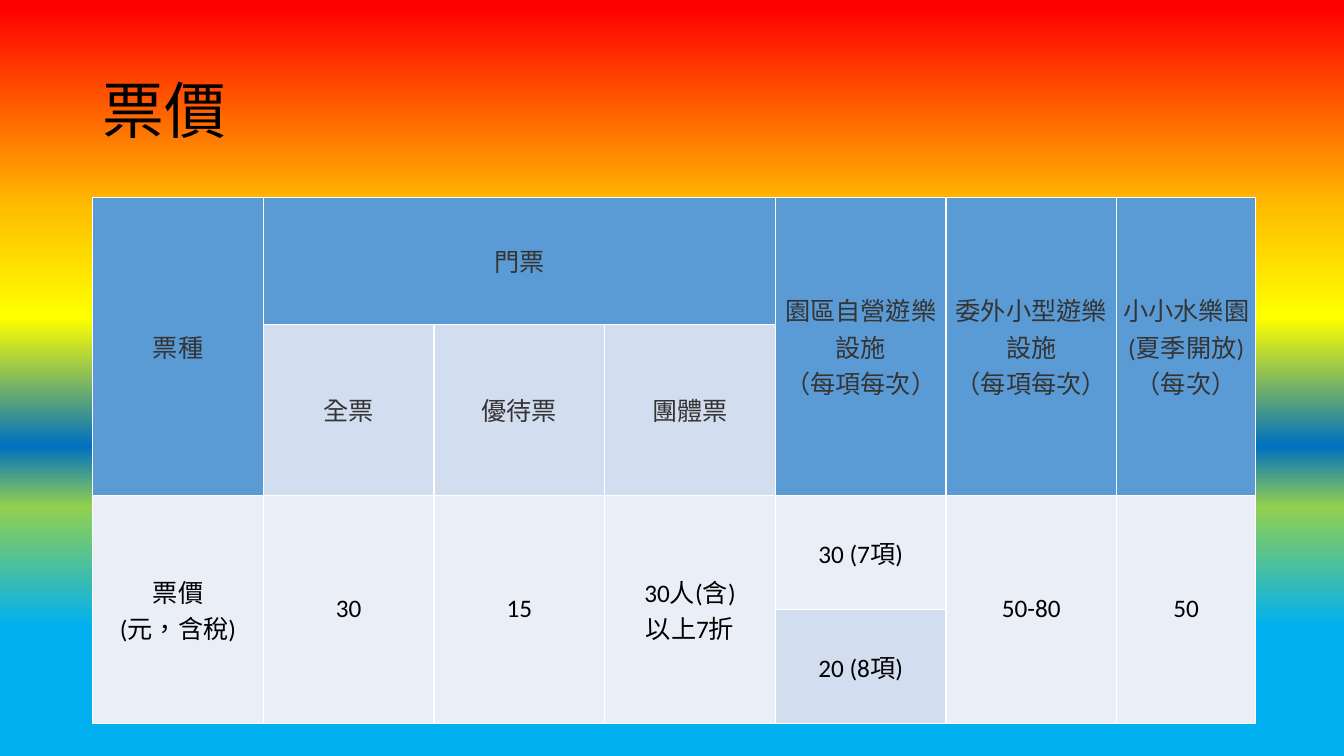
from lxml import etree
from pptx import Presentation
from pptx import util as u
from pptx.dml import color
from pptx.enum import lang, text
from pptx.oxml import ns

COLORS = {
    "ink": "000000", "heading": "343434", "border": "FFFFFF",
    "header": "5B9BD5", "band": "D2DEEF", "pale": "EAEFF7",
}
RAINBOW = [(1, "FF0000"), (28, "FFC000"), (42, "FFFF00"),
           (59, "0070C0"), (67, "92D050"), (83, "00B0F0")]

# Percent of the slide's width and height
COLUMN_SHARES = [12.7] * 6 + [10.35]
ROW_SHARES = [16.8, 22.6, 15.1, 15.1]

# (row, column, rows spanned, columns spanned, wording, fill, text colour)
FARES = [
    (0, 0, 2, 1, "票種", "header", "heading"),
    (0, 1, 1, 3, "門票", "header", "heading"),
    (0, 4, 2, 1, "園區自營遊樂設施\v（每項每次）", "header", "heading"),
    (0, 5, 2, 1, "委外小型遊樂設施\v（每項每次）", "header", "heading"),
    (0, 6, 2, 1, "小小水樂園\v(夏季開放)\v（每次）", "header", "heading"),
    (1, 1, 1, 1, "全票", "band", "heading"),
    (1, 2, 1, 1, "優待票", "band", "heading"),
    (1, 3, 1, 1, "團體票", "band", "heading"),
    (2, 0, 2, 1, "票價\v(元，含稅)", "pale", "ink"),
    (2, 1, 2, 1, "30", "pale", "ink"),
    (2, 2, 2, 1, "15", "pale", "ink"),
    (2, 3, 2, 1, "30人(含)\v以上7折", "pale", "ink"),
    (2, 4, 1, 1, "30 (7項)", "pale", "ink"),
    (3, 4, 1, 1, "20 (8項)", "band", "ink"),
    (2, 5, 2, 1, "50-80", "pale", "ink"),
    (2, 6, 2, 1, "50", "pale", "ink"),
]


def write(frame, words, *, size=18, ink="ink", align=text.PP_ALIGN.LEFT,
          spacing=1.0, font="Calibri"):
    frame.text = words
    frame.word_wrap = True
    for paragraph in frame.paragraphs:
        paragraph.alignment = align
        paragraph.line_spacing = spacing
        for run in paragraph.runs:
            run.font.name = font
            run.font.size = u.Pt(size)
            run.font.color.rgb = color.RGBColor.from_string(COLORS[ink])
            run.font.language_id = lang.MSO_LANGUAGE_ID.TRADITIONAL_CHINESE


class FareSlide:
    def __init__(self, deck):
        self.width, self.height = deck.slide_width, deck.slide_height
        self.slide = deck.slides.add_slide(deck.slide_layouts[6])

    def across(self, percent):
        return u.Emu(round(self.width * percent / 100))

    def down(self, percent):
        return u.Emu(round(self.height * percent / 100))

    def box(self, left, top, width, height):
        return (self.across(left), self.down(top),
                self.across(width), self.down(height))

    def background(self, stops):
        fill = self.slide.background.fill
        fill.gradient()
        fill.gradient_angle = 270
        stop_list = next(self.slide.element.iter(ns.qn("a:gsLst")))
        for stop in list(stop_list):
            stop_list.remove(stop)
        for percent, shade in stops:
            stop = etree.SubElement(stop_list, ns.qn("a:gs"), pos=str(percent * 1000))
            etree.SubElement(stop, ns.qn("a:srgbClr"), val=shade)

    def title(self, words, *place):
        frame = self.slide.shapes.add_textbox(*self.box(*place)).text_frame
        frame.vertical_anchor = text.MSO_ANCHOR.MIDDLE
        write(frame, words, size=44, spacing=0.9)

    def table(self, entries, left, top):
        place = self.box(left, top, sum(COLUMN_SHARES), sum(ROW_SHARES))
        table = self.slide.shapes.add_table(
            len(ROW_SHARES), len(COLUMN_SHARES), *place).table
        table.first_row = table.horz_banding = False
        for column, share in zip(table.columns, COLUMN_SHARES):
            column.width = self.across(share)
        for row, share in zip(table.rows, ROW_SHARES):
            row.height = self.down(share)
        for row, column, tall, wide, words, fill, ink in entries:
            for r in range(row, row + tall):
                for c in range(column, column + wide):
                    self.paint(table.cell(r, c), fill)
            cell = table.cell(row, column)
            if tall * wide > 1:
                cell.merge(table.cell(row + tall - 1, column + wide - 1))
            write(cell.text_frame, words, ink=ink, align=text.PP_ALIGN.CENTER)

    def paint(self, cell, fill):
        """Give one cell its margins, borders and fill."""
        cell.vertical_anchor = text.MSO_ANCHOR.MIDDLE
        cell.margin_left = cell.margin_right = u.Inches(0.03)
        cell.margin_top = cell.margin_bottom = u.Inches(0.03)
        properties = cell._tc.get_or_add_tcPr()
        for side in "LRTB":
            line = etree.SubElement(properties, ns.qn(f"a:ln{side}"), w=str(u.Pt(1)))
            solid = etree.SubElement(line, ns.qn("a:solidFill"))
            etree.SubElement(solid, ns.qn("a:srgbClr"), val=COLORS["border"])
        cell.fill.solid()
        cell.fill.fore_color.rgb = color.RGBColor.from_string(COLORS[fill])


def main():
    deck = Presentation()
    deck.slide_width, deck.slide_height = u.Inches(13.33), u.Inches(7.5)
    page = FareSlide(deck)
    page.background(RAINBOW)
    page.title("票價", 6.9, 5.33, 86.25, 19.33)
    page.table(FARES, 6.9, 26.1)
    deck.save("out.pptx")


if __name__ == "__main__":
    main()
